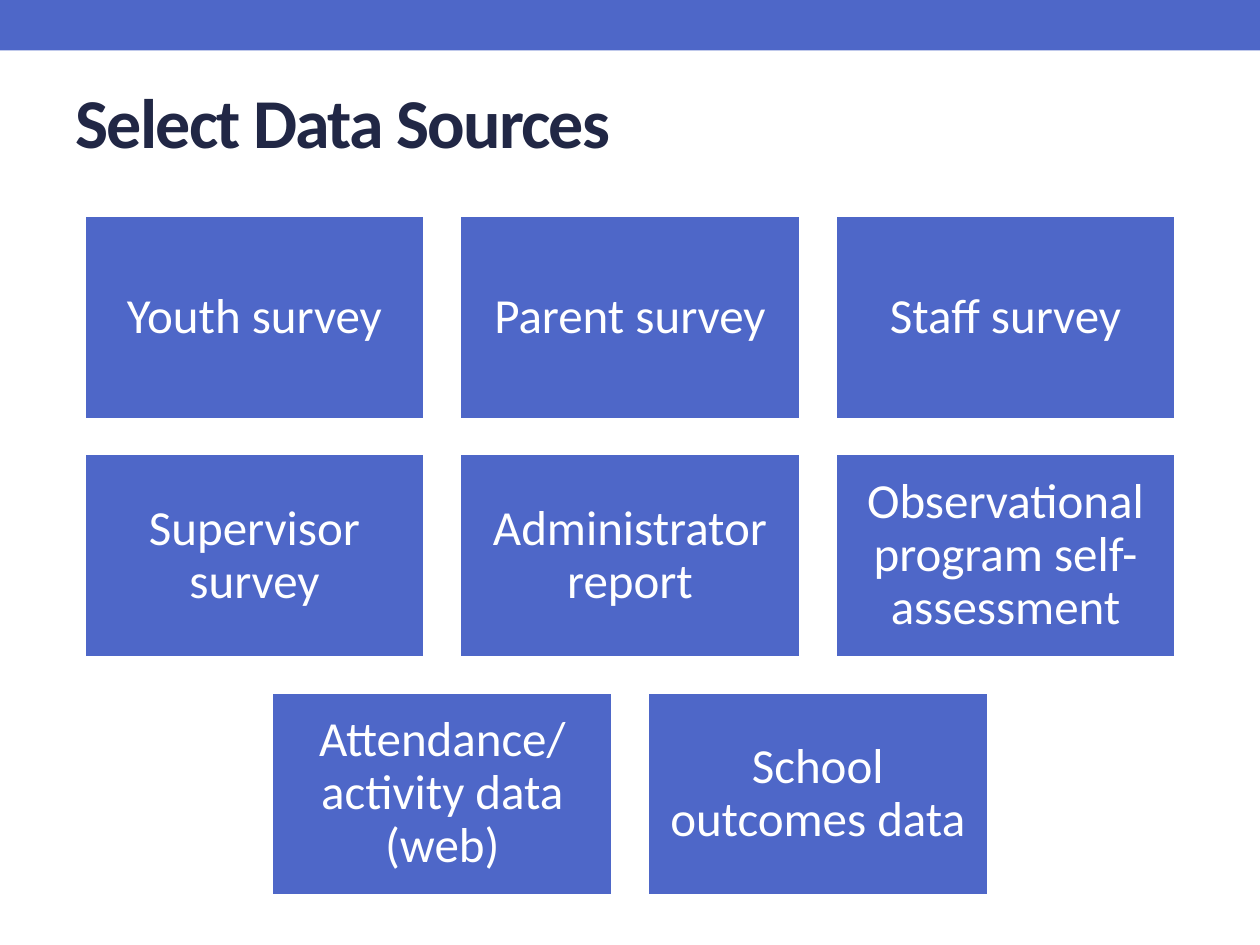
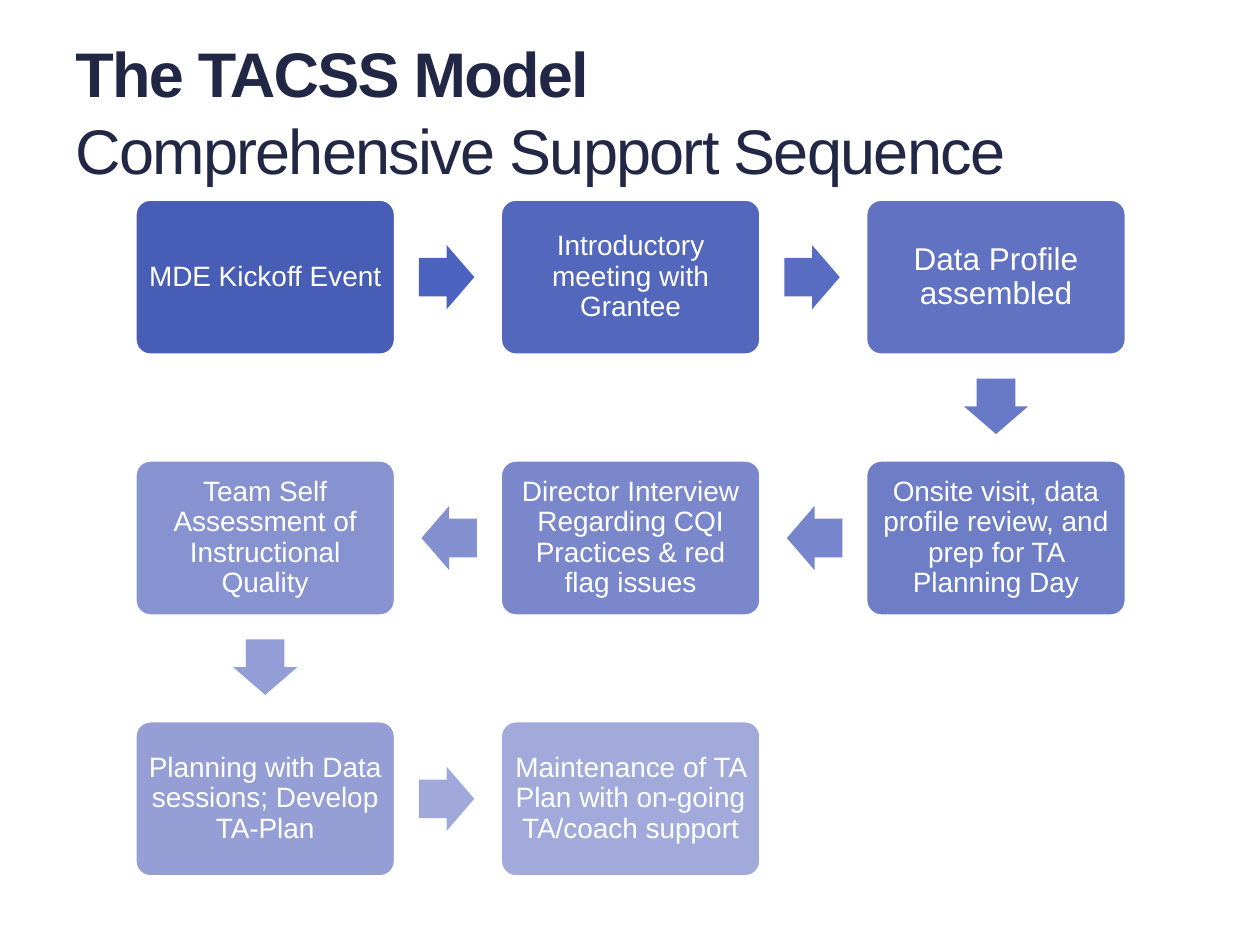
import math
from dataclasses import dataclass

from pptx import Presentation
from pptx import util as u
from pptx.dml.color import RGBColor
from pptx.enum import shapes, text


@dataclass(frozen=True)
class Theme:
    accent: str = "4E67C8"
    ink: str = "212745"
    white: str = "FFFFFF"
    heading_font: str = "Calibri"
    flow_font: str = "Arial"
    source_title_size: int = 40
    model_title_size: int = 36
    source_size: int = 28
    step_size: int = 16
    large_step_size: int = 18
    outline: float = 2.08


@dataclass(frozen=True)
class Card:
    label: str
    left: float
    top: float
    width: float
    height: float
    fill: str
    font: str
    size: int
    margin: float
    radius: float = 0


@dataclass(frozen=True)
class Step:
    label: str
    fill: str
    arrow_fill: str = ""
    size: int = Theme.step_size


THEME = Theme()
SLIDE_W, SLIDE_H = 10, 7.5

SOURCE_ROWS = [
    ["Youth survey", "Parent survey", "Staff survey"],
    ["Supervisor survey", "Administrator report", "Observational program self-assessment"],
    ["Attendance/ activity data (web)", "School outcomes data"],
]
SOURCE_W, SOURCE_H, SOURCE_GAP, SOURCE_TOP = 2.71, 1.62, 0.27, 1.71

STEPS = [
    Step("MDE Kickoff Event", "475DB6", "4B62BF"),
    Step("Introductory meeting with Grantee", "5367BC", "596EC3"),
    Step("Data Profile assembled", "6072C1", "6879C8", THEME.large_step_size),
    Step("Onsite visit, data profile review, and prep for TA Planning Day", "6D7DC6", "7685CC"),
    Step("Director Interview Regarding CQI Practices & red flag issues", "7A88CB", "8491D1"),
    Step("Team Self Assessment of Instructional Quality", "8793D0", "939DD6"),
    Step("Planning with Data sessions; Develop TA-Plan", "959ED5", "A1A9DB"),
    Step("Maintenance of TA Plan with on-going TA/coach support", "A2AADB"),
]
STEP_COLS = 3
STEP_W, STEP_H = 2.07, 1.24
STEP_LEFT, STEP_TOP = 1.07, 1.58
STEP_PITCH_X, STEP_PITCH_Y = 2.9, 2.07
ARROW_W, ARROW_H, ARROW_SETBACK = 0.44, 0.51, 0.01


def add_solid(slide, kind, left: float, top: float, width: float, height: float, fill: str):
    sp = slide.shapes.add_shape(kind, u.Inches(left), u.Inches(top), u.Inches(width), u.Inches(height))
    sp.shadow.inherit = False
    sp.fill.solid()
    sp.fill.fore_color.rgb = RGBColor.from_string(fill)
    sp.line.fill.background()
    return sp


def style_run(r, font: str, size: int, color: str, bold: bool = False) -> None:
    r.font.name = font
    r.font.size = u.Pt(size)
    r.font.bold = bold
    r.font.color.rgb = RGBColor.from_string(color)


def add_title(slide, lines: list[str], top: float, font: str, size: int) -> None:
    sp = slide.shapes.add_textbox(u.Inches(0.5), u.Inches(top), u.Inches(9), u.Inches(1.08))
    tf = sp.text_frame
    tf.word_wrap = True
    tf.vertical_anchor = text.MSO_ANCHOR.MIDDLE
    tf.text = "\n".join(lines)
    for i, p in enumerate(tf.paragraphs):
        if len(lines) > 1:
            p.line_spacing = u.Pt(44)
        r = p.runs[0]
        style_run(r, font, size, THEME.ink, bold=i == 0)
        r.font._element.set("spc", "-100")


def add_card(slide, card: Card) -> None:
    kind = shapes.MSO_SHAPE.ROUNDED_RECTANGLE if card.radius else shapes.MSO_SHAPE.RECTANGLE
    sp = add_solid(slide, kind, card.left, card.top, card.width, card.height, card.fill)
    if card.radius:
        sp.adjustments[0] = card.radius
    sp.line.color.rgb = RGBColor.from_string(THEME.white)
    sp.line.width = u.Pt(THEME.outline)
    tf = sp.text_frame
    tf.word_wrap = True
    tf.vertical_anchor = text.MSO_ANCHOR.MIDDLE
    tf.margin_left = tf.margin_right = tf.margin_top = tf.margin_bottom = u.Inches(card.margin)
    p = tf.paragraphs[0]
    p.text = card.label
    p.alignment = text.PP_ALIGN.CENTER
    p.line_spacing = 0.9
    style_run(p.runs[0], card.font, card.size, THEME.white)


def step_position(index: int) -> tuple[float, float]:
    row, col = divmod(index, STEP_COLS)
    if row % 2:
        col = STEP_COLS - 1 - col
    return STEP_LEFT + col * STEP_PITCH_X, STEP_TOP + row * STEP_PITCH_Y


def add_step_arrow(slide, index: int, fill: str) -> None:
    (x1, y1), (x2, y2) = step_position(index), step_position(index + 1)
    angle = math.atan2(y2 - y1, x2 - x1)
    center_x = (x1 + x2 + STEP_W) / 2 - ARROW_SETBACK * math.cos(angle)
    center_y = (y1 + y2 + STEP_H) / 2 - ARROW_SETBACK * math.sin(angle)
    sp = add_solid(slide, shapes.MSO_SHAPE.RIGHT_ARROW, center_x - ARROW_W / 2,
                   center_y - ARROW_H / 2, ARROW_W, ARROW_H, fill)
    sp.adjustments[0] = 0.6
    sp.adjustments[1] = 0.5
    sp.rotation = math.degrees(angle)


def build_sources(slide) -> None:
    add_solid(slide, shapes.MSO_SHAPE.RECTANGLE, 0, 0, SLIDE_W, 0.4, THEME.accent)
    add_title(slide, ["Select Data Sources"], 0.42, THEME.heading_font, THEME.source_title_size)
    for row, labels in enumerate(SOURCE_ROWS):
        row_width = len(labels) * (SOURCE_W + SOURCE_GAP) - SOURCE_GAP
        for col, label in enumerate(labels):
            left = (SLIDE_W - row_width) / 2 + col * (SOURCE_W + SOURCE_GAP)
            top = SOURCE_TOP + row * (SOURCE_H + SOURCE_GAP)
            add_card(slide, Card(label, left, top, SOURCE_W, SOURCE_H, THEME.accent,
                                 THEME.heading_font, THEME.source_size, 0.12))


def build_model(slide) -> None:
    add_title(slide, ["The TACSS Model", "Comprehensive Support Sequence"], 0.33,
              THEME.flow_font, THEME.model_title_size)
    for i, step in enumerate(STEPS):
        left, top = step_position(i)
        add_card(slide, Card(step.label, left, top, STEP_W, STEP_H, step.fill,
                             THEME.flow_font, step.size, 0.06, 0.1))
        if step.arrow_fill:
            add_step_arrow(slide, i, step.arrow_fill)


def main() -> None:
    prs = Presentation()
    prs.slide_width, prs.slide_height = u.Inches(SLIDE_W), u.Inches(SLIDE_H)
    for build in (build_sources, build_model):
        build(prs.slides.add_slide(prs.slide_layouts[6]))
    prs.save("out.pptx")


if __name__ == "__main__":
    main()
